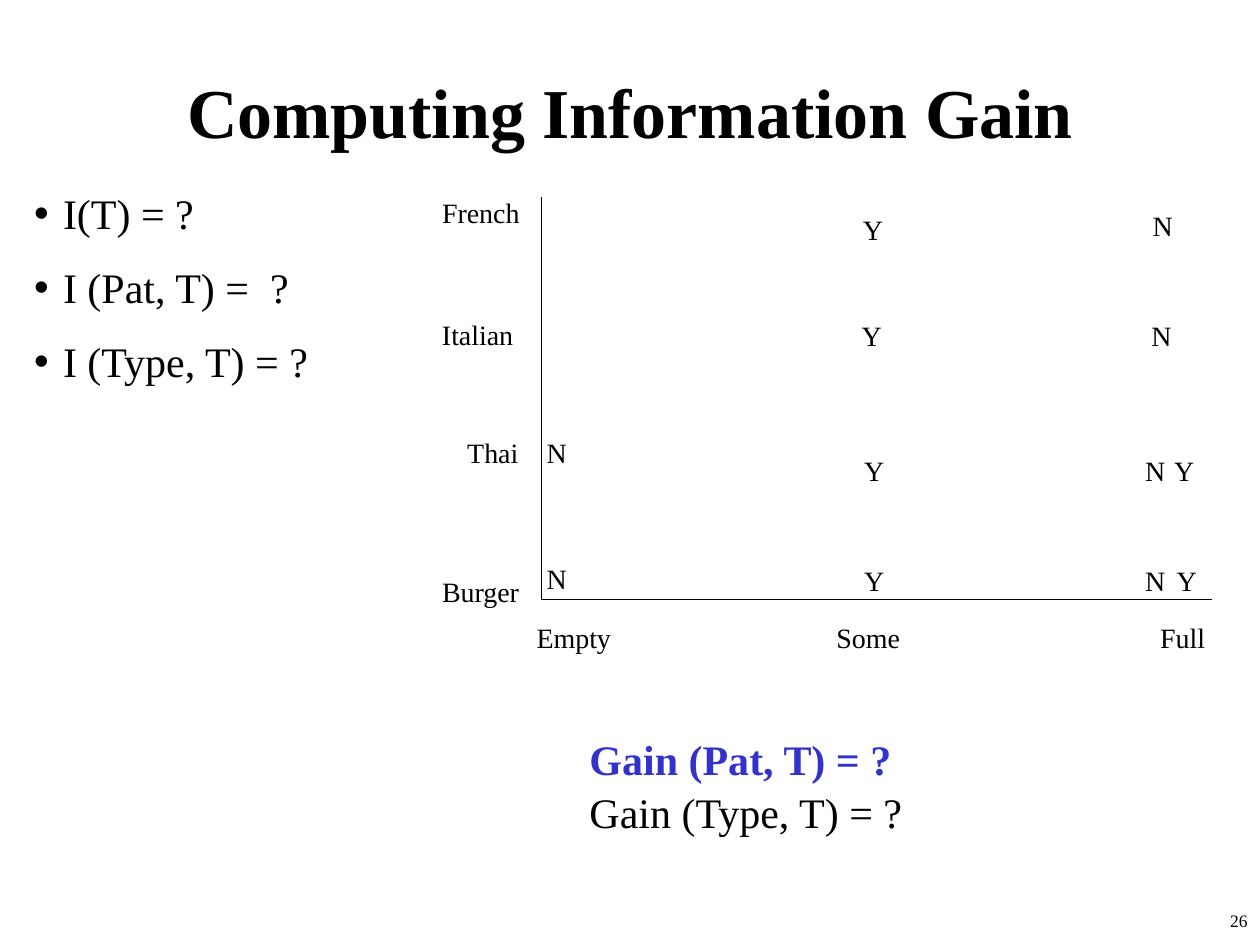
import pptx
import pptx.dml.color
import pptx.enum.shapes
import pptx.enum.text
import pptx.oxml.ns
import pptx.util
from lxml import etree
from pptx.util import Inches

FONT = "Times New Roman"
BLACK = "000000"
BLUE = "3333CC"
ALIGN = pptx.enum.text.PP_ALIGN
ANCHOR = pptx.enum.text.MSO_ANCHOR

LABEL_HEIGHT = 0.37
MARK_WIDTH = 0.36
# Label, left offset from the plot, top offset from the plot, width
TYPE_LABELS = [
    ("French", -0.89, -0.06, 0.82),
    ("Italian", -0.89, 0.91, 0.77),
    ("Thai", -0.69, 1.85, 0.61),
    ("Burger", -0.89, 2.95, 0.82),
]
PATRON_LABELS = [
    ("Empty", -0.14, 3.32, 0.79),
    ("Some", 2.24, 3.32, 0.71),
    ("Full", 4.81, 3.32, 0.56),
]
MARKS = {
    "Y": [(2.45, 0.08), (2.44, 0.92), (2.46, 1.99), (2.46, 2.86),
          (4.92, 1.99), (4.94, 2.86)],
    "N": [(4.75, 0.05), (4.74, 0.92), (4.69, 1.99), (4.69, 2.86),
          (-0.06, 1.85), (-0.06, 2.85)],
}


def color(hex_string):
    return pptx.dml.color.RGBColor.from_string(hex_string)


def place(shape, box):
    shape.left, shape.top, shape.width, shape.height = map(Inches, box)


def write(paragraph, text, size=16, fill=BLACK, bold=False, align=ALIGN.LEFT,
          line_spacing=1.0, space_after=0):
    paragraph.alignment = align
    paragraph.line_spacing = line_spacing
    paragraph.space_before = pptx.util.Pt(0)
    paragraph.space_after = pptx.util.Pt(space_after)
    run = paragraph.add_run()
    run.text = text
    run.font.name = FONT
    run.font.size = pptx.util.Pt(size)
    run.font.bold = bold
    run.font.color.rgb = color(fill)


def add_text_box(slide, box, wrap=True):
    frame = slide.shapes.add_textbox(*map(Inches, box)).text_frame
    frame.word_wrap = wrap
    return frame


def add_axis(slide, start, end):
    line = slide.shapes.add_connector(
        pptx.enum.shapes.MSO_CONNECTOR.STRAIGHT, *map(Inches, start + end))
    line.line.color.rgb = color(BLACK)
    line.line.width = pptx.util.Pt(0.75)
    etree.SubElement(line._element.spPr, pptx.oxml.ns.qn("a:effectLst"))


def fill_title(slide, box):
    title = slide.shapes.title
    place(title, box)
    title.text_frame.auto_size = pptx.enum.text.MSO_AUTO_SIZE.NONE
    title.text_frame.vertical_anchor = ANCHOR.MIDDLE
    write(title.text_frame.paragraphs[0], "Computing Information Gain",
          size=40, bold=True, align=ALIGN.CENTER)


def fill_questions(slide, box):
    body = slide.placeholders[1]
    place(body, box)
    frame = body.text_frame
    frame.auto_size = pptx.enum.text.MSO_AUTO_SIZE.NONE
    frame.vertical_anchor = ANCHOR.TOP
    questions = ["I(T) = ?", "I (Pat, T) =  ?", "I (Type, T) = ?"]
    for index, question in enumerate(questions):
        paragraph = frame.add_paragraph() if index else frame.paragraphs[0]
        write(paragraph, question, size=24, line_spacing=1.05, space_after=12)
        properties = paragraph._p.get_or_add_pPr()
        properties.set("marL", str(Inches(0.23)))
        properties.set("indent", str(-Inches(0.23)))
        bullet = etree.SubElement(properties, pptx.oxml.ns.qn("a:buChar"))
        bullet.set("char", "•")


def add_plot(slide, box):
    """Restaurant types against patrons, with a Y or N for each outcome."""
    left, top, width, height = box
    corner = (left, top + height)
    add_axis(slide, (left, top), corner)
    add_axis(slide, corner, (left + width, top + height))
    marks = [(mark, x, y, MARK_WIDTH)
             for mark, spots in MARKS.items() for x, y in spots]
    for text, x, y, label_width in TYPE_LABELS + PATRON_LABELS + marks:
        frame = add_text_box(
            slide, (left + x, top + y, label_width, LABEL_HEIGHT), wrap=False)
        write(frame.paragraphs[0], text)


def add_gains(slide, box):
    frame = add_text_box(slide, box)
    write(frame.paragraphs[0], "Gain (Pat, T) = ?", size=24, fill=BLUE,
          bold=True, line_spacing=1.05)
    write(frame.add_paragraph(), "Gain (Type, T) = ?", size=24,
          line_spacing=1.05)


def add_page_number(slide, box):
    frame = add_text_box(slide, box)
    write(frame.paragraphs[0], "26", size=10, align=ALIGN.RIGHT)


def main():
    presentation = pptx.Presentation()
    presentation.slide_width = Inches(10)
    presentation.slide_height = Inches(7.5)
    slide = presentation.slides.add_slide(presentation.slide_layouts[1])
    fill_title(slide, (0.75, 0.25, 8.5, 1.25))
    fill_questions(slide, (0.17, 1.42, 3.42, 1.7))
    add_plot(slide, (4.3, 1.56, 5.32, 3.2))
    add_gains(slide, (4.58, 5.75, 4.25, 0.9))
    add_page_number(slide, (7.92, 7.17, 2.08, 0.33))
    presentation.save("out.pptx")


if __name__ == "__main__":
    main()
